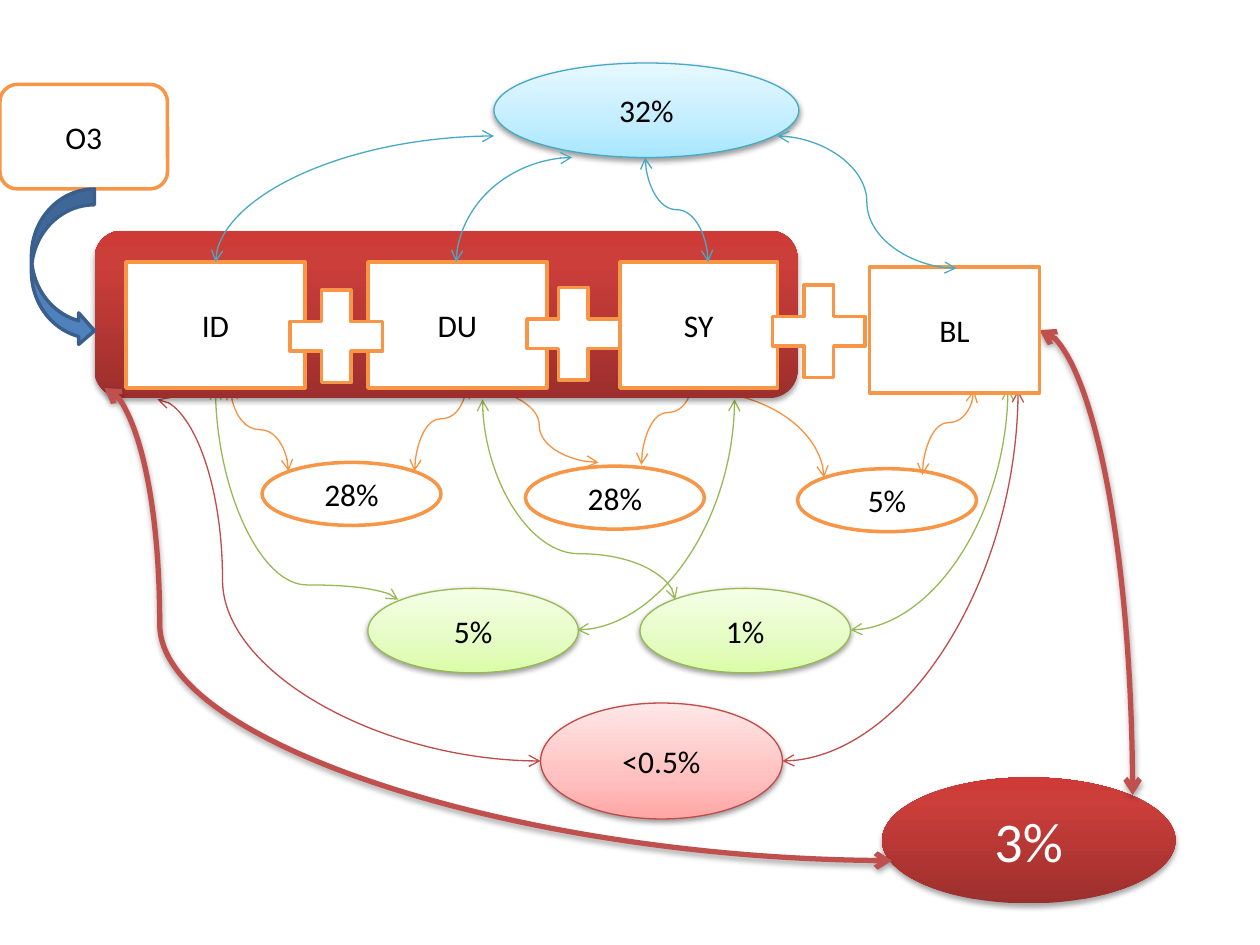
from dataclasses import dataclass
from typing import NamedTuple, Optional

from lxml.etree import SubElement
from pptx import Presentation
from pptx.dml.color import RGBColor
from pptx.enum.shapes import MSO_CONNECTOR, MSO_SHAPE
from pptx.enum.text import MSO_ANCHOR, PP_ALIGN
from pptx.oxml.ns import qn
from pptx.util import Inches, Pt

OVAL = MSO_SHAPE.OVAL
RECT = MSO_SHAPE.RECTANGLE
ROUND = MSO_SHAPE.ROUNDED_RECTANGLE
PLUS = MSO_SHAPE.MATH_PLUS
BEND = MSO_SHAPE.CURVED_RIGHT_ARROW
CURVE = MSO_CONNECTOR.CURVE
MIDDLE = MSO_ANCHOR.MIDDLE
CENTER = PP_ALIGN.CENTER


class Shade(NamedTuple):
    """Alpha in percent, blur and offset in points."""
    alpha: int
    blur: float
    dist: float


class Look(NamedTuple):
    """Fill is one colour, or (position, colour) stops from the bottom up."""
    fill: object
    line: Optional[str] = None
    width: float = 0.75
    shade: Optional[Shade] = None
    ink: str = "000000"
    size: int = 18


class Ink(NamedTuple):
    color: str
    width: float = 0.75
    shade: Optional[Shade] = None


def ramp(*colors: str, mid: int = 35) -> list:
    return list(zip((0, mid, 100), colors))


SOFT = Shade(38, 3.15, 1.57)
DEEP = Shade(35, 3.15, 1.81)


@dataclass(frozen=True)
class Theme:
    font: str = "Calibri"
    plain: Look = Look("FFFFFF", "F79646", 2)
    green: Look = Look(ramp("DAFDA7", "E4FCC2", "F5FFE7"), "98B955", shade=SOFT)
    pink: Look = Look(ramp("FFA6A5", "FFC0BF", "FFE7E7"), "BF4C48", shade=SOFT)
    blue: Look = Look(ramp("A7E6FF", "C1EDFF", "E7F8FF"), "46AAC5", shade=SOFT)
    red: Look = Look(ramp("9C2F2D", "CB3E3A", "CE3B37", mid=80), shade=DEEP,
                     ink="FFFFFF", size=32)
    arrow: Look = Look("4F81BD", "3A5F8C", 2)
    orange_ink: Ink = Ink("F69240")
    green_ink: Ink = Ink("98B955")
    pink_ink: Ink = Ink("BF4C48")
    blue_ink: Ink = Ink("46AAC5")
    red_ink: Ink = Ink("C0504D", 3, DEEP)


class Box(NamedTuple):
    kind: int
    x: float
    y: float
    w: float
    h: float
    look: Look
    text: str = ""


class Wire(NamedTuple):
    """A curve; turn says it leaves upright, and without bend it is a quarter."""
    x1: float
    y1: float
    x2: float
    y2: float
    ink: Ink
    turn: bool = True
    bend: Optional[float] = None


def add_shade(effects, shade: Shade) -> None:
    drop = SubElement(effects, qn("a:outerShdw"), blurRad=str(Pt(shade.blur)),
                      dist=str(Pt(shade.dist)), dir="5400000", rotWithShape="0")
    color = SubElement(drop, qn("a:srgbClr"), val="000000")
    SubElement(color, qn("a:alpha"), val=str(shade.alpha * 1000))


def paint(shape, fill) -> None:
    if isinstance(fill, str):
        shape.fill.solid()
        shape.fill.fore_color.rgb = RGBColor.from_string(fill)
        return
    shape.fill.gradient()
    shape.fill.gradient_angle = 90
    stops = shape.element.spPr.find(".//" + qn("a:gsLst"))
    for old in list(stops):
        stops.remove(old)
    for place, color in fill:
        stop = SubElement(stops, qn("a:gs"), pos=str(place * 1000))
        SubElement(stop, qn("a:srgbClr"), val=color)


def write(shape, text: str, *, font: str, size: int, color: str) -> None:
    frame = shape.text_frame
    frame.word_wrap = True
    frame.vertical_anchor = MIDDLE
    para = frame.paragraphs[0]
    para.alignment = CENTER
    run = para.add_run()
    run.text = text
    run.font.name = font
    run.font.size = Pt(size)
    run.font.color.rgb = RGBColor.from_string(color)


def draw_box(shapes, box: Box, theme: Theme) -> None:
    look = box.look
    shape = shapes.add_shape(box.kind, *map(Inches, (box.x, box.y, box.w, box.h)))
    shape.shadow.inherit = False
    paint(shape, look.fill)
    if look.line:
        shape.line.color.rgb = RGBColor.from_string(look.line)
        shape.line.width = Pt(look.width)
    else:
        shape.line.fill.background()
    if look.shade:
        add_shade(shape.element.spPr.find(qn("a:effectLst")), look.shade)
    if box.text:
        write(shape, box.text, font=theme.font, size=look.size, color=look.ink)


def draw_wire(shapes, wire: Wire) -> None:
    x1, y1, x2, y2 = wire[:4]
    dx, dy = x2 - x1, y2 - y1
    if wire.turn:
        # A quarter turn swaps the sides of the frame about its centre
        mx, my = (x1 + x2) / 2, (y1 + y2) / 2
        half_w = abs(dy) / 2 * (-1 if dx > 0 else 1)
        half_h = abs(dx) / 2 * (-1 if dy < 0 else 1)
        x1, y1, x2, y2 = mx - half_w, my - half_h, mx + half_w, my + half_h
    link = shapes.add_connector(CURVE, *map(Inches, (x1, y1, x2, y2)))
    props = link.element.spPr
    if wire.turn:
        angle = 90 if dx * dy < 0 else 270
        props.find(qn("a:xfrm")).set("rot", str(angle * 60000))
    shape = props.find(qn("a:prstGeom"))
    if wire.bend is None:
        shape.set("prst", "curvedConnector2")
    else:
        SubElement(shape.find(qn("a:avLst")), qn("a:gd"), name="adj1",
                   fmla=f"val {round(wire.bend * 100000)}")
    link.line.color.rgb = RGBColor.from_string(wire.ink.color)
    link.line.width = Pt(wire.ink.width)
    for end in ("a:headEnd", "a:tailEnd"):
        SubElement(props.find(qn("a:ln")), qn(end), type="arrow")
    effects = SubElement(props, qn("a:effectLst"))
    if wire.ink.shade:
        add_shade(effects, wire.ink.shade)


def layers(t: Theme) -> list:
    """Groups of parts, from back to front."""
    return [
        # Pairs
        [Box(OVAL, x, y, 1.42, 0.5, t.plain, text) for x, y, text in
         ((2.08, 3.67, "28%"), (4.17, 3.7, "28%"), (6.33, 3.72, "5%"))]
        + [Wire(1.83, 3.08, 2.29, 3.74, t.orange_ink, bend=0.5),
           Wire(3.75, 3.08, 4.75, 3.67, t.orange_ink, turn=False, bend=0.53),
           Wire(5.53, 3.1, 6.54, 3.79, t.orange_ink, turn=False)]
        + [Wire(x, y, x - 0.41, y + 0.67, t.orange_ink, bend=0.38)
           for x, y in ((3.7, 3.07), (5.5, 3.02), (7.73, 3.1))],
        # Pairs further apart
        [Box(OVAL, x, 4.67, 1.67, 0.67, t.green, text)
         for x, text in ((2.92, "5%"), (5.08, "1%"))]
        + [Wire(1.71, 3.08, 3.16, 4.76, t.green_ink, bend=0.93),
           Wire(5.83, 3.17, 4.58, 5, t.green_ink),
           Wire(3.83, 3.17, 5.36, 4.76, t.green_ink, bend=0.77),
           Wire(8, 3.08, 6.75, 5, t.green_ink)],
        # First with last
        [Box(OVAL, 4.29, 5.58, 1.92, 0.92, t.pink, "<0.5%"),
         Wire(8.08, 3.1, 6.21, 6.04, t.pink_ink),
         Wire(1.25, 3.17, 4.29, 6.04, t.pink_ink, turn=False, bend=0.17)],
        # Red panel and its share
        [Box(ROUND, 0.75, 1.83, 5.58, 1.33, t.red),
         Box(OVAL, 7, 6.17, 2.33, 1, t.red, "3%"),
         Wire(0.83, 3.08, 7.08, 6.83, t.red_ink, turn=False, bend=0.07),
         Wire(8.25, 2.62, 8.99, 6.31, t.red_ink, turn=False)],
        # Source, four factors and plus signs
        [Box(ROUND, 0, 0.67, 1.33, 0.83, t.plain, "O3"),
         Box(BEND, 0.25, 1.5, 0.5, 1.25, t.arrow)]
        + [Box(RECT, x, y, w, 1, t.plain, text) for x, y, w, text in
           ((4.92, 2.08, 1.25, "SY"), (1, 2.08, 1.42, "ID"),
            (2.92, 2.08, 1.42, "DU"), (6.9, 2.12, 1.35, "BL"))]
        + [Box(PLUS, x, y, 1, 1, t.plain)
           for x, y in ((2.17, 2.17), (4.05, 2.15), (6, 2.13))],
        # All four together
        [Box(OVAL, 3.92, 0.5, 2.42, 0.75, t.blue, "32%"),
         Wire(1.71, 2.08, 3.92, 1.08, t.blue_ink),
         Wire(3.62, 2.08, 4.54, 1.25, t.blue_ink),
         Wire(5.62, 2.08, 5.12, 1.25, t.blue_ink, bend=0.5),
         Wire(7.59, 2.13, 6.17, 1.08, t.blue_ink, turn=False, bend=0.5)],
    ]


def main() -> None:
    theme = Theme()
    deck = Presentation()
    deck.slide_width, deck.slide_height = Inches(10), Inches(7.5)
    slide = deck.slides.add_slide(deck.slide_layouts[6])
    for parts in layers(theme):
        shapes = slide.shapes.add_group_shape().shapes
        for part in parts:
            if isinstance(part, Box):
                draw_box(shapes, part, theme)
            else:
                draw_wire(shapes, part)
    deck.save("out.pptx")


if __name__ == "__main__":
    main()
